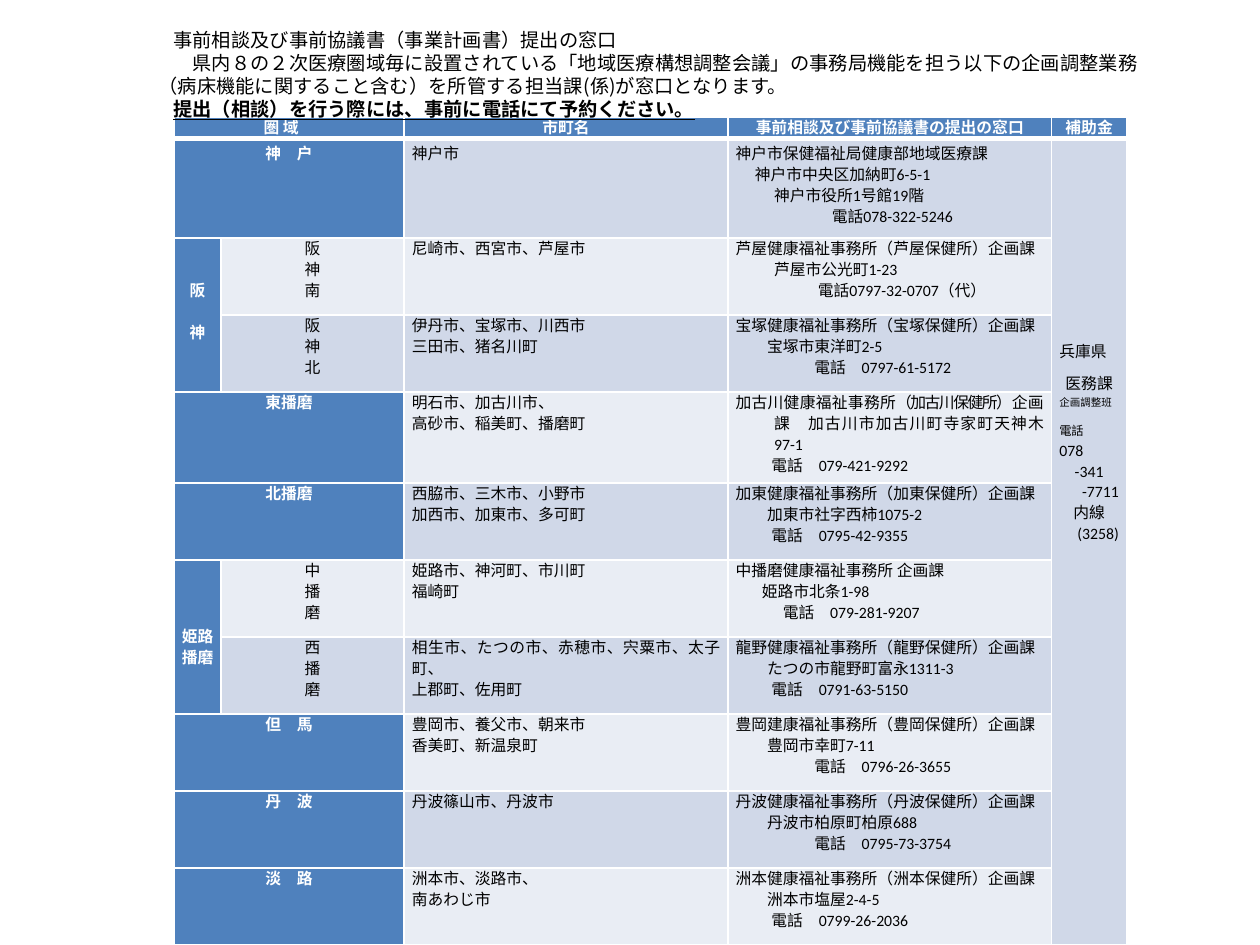
from pptx import Presentation
from pptx.dml.color import RGBColor
from pptx.enum.text import MSO_ANCHOR, PP_ALIGN
from pptx.oxml.ns import qn
from pptx.util import Pt
from lxml.etree import SubElement

HEX = {"head": "4F81BD", "dark": "D0D8E8", "pale": "E9EDF4",
       "white": "FFFFFF", "black": "000000"}
LATIN, ASIAN = "Calibri", "Noto Sans CJK JP"
LEFT, MID, RIGHT, FULL = (PP_ALIGN.LEFT, PP_ALIGN.CENTER,
                          PP_ALIGN.RIGHT, PP_ALIGN.JUSTIFY)

TITLE = [
    (44, "事前相談及び事前協議書（事業計画書）提出の窓口"),
    (55, "県内８の２次医療圏域毎に設置されている「地域医療構想調整会議」の事務局機能を担う以下の企画調整業務"),
    (35.5, "（病床機能に関すること含む）を所管する担当課(係)が窓口となります。"),
    (44, "提出（相談）を行う際には、事前に電話にて予約ください。"),
]
COLS = [27, 104.5, 185, 185, 43]
HEADS = {0: "圏 域　", 2: "市町名", 3: "事前相談及び事前協議書の提出の窓口", 4: "補助金"}

# area, towns, desk lines as (indent, text)
ROWS = [
    ("神　戸", ["神戸市"],
     [(0, "神戸市保健福祉局健康部地域医療課"), (11, "神戸市中央区加納町6-5-1"),
      (22, "神戸市役所1号館19階"), (55, "電話078-322-5246")]),
    ("阪神南", ["尼崎市、西宮市、芦屋市"],
     [(0, "芦屋健康福祉事務所（芦屋保健所）企画課"), (22, "芦屋市公光町1-23"),
      (47, "電話0797-32-0707（代）")]),
    ("阪神北", ["伊丹市、宝塚市、川西市", "三田市、猪名川町"],
     [(0, "宝塚健康福祉事務所（宝塚保健所）企画課"), (18, "宝塚市東洋町2-5"),
      (45, "電話　0797-61-5172")]),
    ("東播磨", ["明石市、加古川市、", "高砂市、稲美町、播磨町"],
     [(22, "加古川健康福祉事務所（加古川保健所）企画課　加古川市加古川町寺家町天神木97-1"),
      (20.5, "電話　079-421-9292")]),
    ("北播磨", ["西脇市、三木市、小野市", "加西市、加東市、多可町"],
     [(0, "加東健康福祉事務所（加東保健所）企画課"), (18, "加東市社字西柿1075-2"),
      (20.5, "電話　0795-42-9355")]),
    ("中播磨", ["姫路市、神河町、市川町", "福崎町"],
     [(0, "中播磨健康福祉事務所 企画課"), (15, "姫路市北条1-98"),
      (27, "電話　079-281-9207")]),
    ("西播磨", ["相生市、たつの市、赤穂市、宍粟市、太子町、", "上郡町、佐用町"],
     [(0, "龍野健康福祉事務所（龍野保健所）企画課"), (18, "たつの市龍野町富永1311-3"),
      (20.5, "電話　0791-63-5150")]),
    ("但　馬", ["豊岡市、養父市、朝来市", "香美町、新温泉町"],
     [(0, "豊岡建康福祉事務所（豊岡保健所）企画課"), (18, "豊岡市幸町7-11"),
      (45, "電話　0796-26-3655")]),
    ("丹　波", ["丹波篠山市、丹波市"],
     [(0, "丹波健康福祉事務所（丹波保健所）企画課"), (18, "丹波市柏原町柏原688"),
      (45, "電話　0795-73-3754")]),
    ("淡　路", ["洲本市、淡路市、", "南あわじ市"],
     [(0, "洲本健康福祉事務所（洲本保健所）企画課"), (18, "洲本市塩屋2-4-5"),
      (20.5, "電話　0799-26-2036")]),
]
# first row of each group, with its name lines and the space above the text
GROUPS = {2: (["阪", "神"], 24), 6: (["姫路播磨"], 12)}
SPLIT = {row + step for row in GROUPS for step in (0, 1)}
# text, alignment, size, line height, space before
GRANT = [
    ("兵庫県", LEFT, 9, 18, 0), ("医務課", MID, 9, 18, 0),
    ("企画調整班", LEFT, 6, 9, 0), ("電話", LEFT, 7, 12, 5),
    ("078", LEFT, 9, 12, 0), ("-341", MID, 9, 12, 0),
    ("-7711", RIGHT, 9, 12, 0), ("内線", MID, 9, 12, 0),
    ("(3258)", RIGHT, 9, 12, 0),
]


def color(name):
    return RGBColor.from_string(HEX[name])


def style(para, size=9, line=12, align=LEFT, tone="black", bold=False, latin=LATIN):
    para.alignment = align
    para.line_spacing = Pt(line)
    for run in para.runs:
        font = run.font
        font.name, font.size, font.bold = latin, Pt(size), bold
        font.color.rgb = color(tone)
        SubElement(run._r.get_or_add_rPr(), qn("a:ea"), typeface=ASIAN)


def indent(para, left, first=0):
    props = para._p.get_or_add_pPr()
    props.set("marL", str(Pt(left)))
    props.set("indent", str(Pt(first)))


def border(cell, base):
    props = cell._tc.get_or_add_tcPr()
    for side in "LRTB":
        line = SubElement(props, qn("a:ln" + side),
                          w=str(Pt(base if side == "B" else 1)))
        fill = SubElement(line, qn("a:solidFill"))
        SubElement(fill, qn("a:srgbClr"), val=HEX["white"])


def paint(cell, tone, base=1):
    border(cell, base)
    cell.fill.solid()
    cell.fill.fore_color.rgb = color(tone)
    cell.margin_left = cell.margin_right = Pt(4.5)
    cell.margin_top = cell.margin_bottom = 0


def write(cell, lines, **look):
    cell.text_frame.text = "\n".join(lines)
    for para in cell.text_frame.paragraphs:
        style(para, **look)
    return cell.text_frame.paragraphs


def add_desk(cell, lines, line):
    paras = write(cell, [text for _, text in lines], align=FULL)
    paras[0].line_spacing = Pt(line)
    for para, (left, _) in zip(paras, lines):
        indent(para, left)
    if lines[0][0]:
        hang(paras[0], lines[0][0])


def hang(para, left):
    """Hang the first line and tighten its bracketed part."""
    start, rest = para.text.split("（")
    inner, end = rest.split("）")
    para.text = ""
    for part in (start, f"（{inner}）", end):
        para.add_run().text = part
    style(para, align=FULL)
    indent(para, left, -left)
    para.runs[1]._r.get_or_add_rPr().set("spc", "-100")


def add_grant(cell):
    cell.margin_top = Pt(110)
    paras = write(cell, [item[0] for item in GRANT])
    for para, (_, align, size, line, gap) in zip(paras, GRANT):
        para.alignment, para.line_spacing = align, Pt(line)
        para.space_before = Pt(gap)
        para.runs[0].font.size = Pt(size)


def add_group(table, row, lines, top):
    cell = table.cell(row, 0)
    cell.merge(table.cell(row + 1, 0))
    paras = write(cell, lines, align=MID, tone="white", bold=True)
    cell.margin_top = Pt(top)
    if len(lines) == 1:
        cell.vertical_anchor = MSO_ANCHOR.MIDDLE
    for para in paras[1:]:
        para.space_before = Pt(12)


def add_title(slide):
    box = slide.shapes.add_textbox(Pt(48), Pt(11), Pt(614), Pt(82))
    frame = box.text_frame
    frame.word_wrap = True
    frame.margin_top, frame.margin_right = Pt(5), 0
    frame.text = "\n".join(text for _, text in TITLE)
    for para, (left, _) in zip(frame.paragraphs, TITLE):
        style(para, size=11, line=13.15, latin=ASIAN)
        indent(para, left)
    last = frame.paragraphs[-1].runs[0].font
    last.bold = last.underline = True


def add_desks(slide):
    highs = [12, 57, 44, 44, 52] + [44] * 6
    table = slide.shapes.add_table(len(highs), len(COLS), Pt(99.4), Pt(67),
                                   Pt(sum(COLS)), Pt(sum(highs))).table
    for col, wide in zip(table.columns, COLS):
        col.width = Pt(wide)
    for row, high in zip(table.rows, highs):
        row.height = Pt(high)
    for row in range(len(highs)):
        band = "dark" if row % 2 or row in (3, 5, 7, 9) else "pale"
        if row:
            band = "dark" if row in (1, 3, 5, 7, 9) else "pale"
        for col in range(len(COLS)):
            area = col == 0 or (col == 1 and row not in SPLIT)
            tone = "head" if row == 0 or area else "dark" if col == 4 else band
            paint(table.cell(row, col), tone, 1 if row else 3)
    for col, text in HEADS.items():
        write(table.cell(0, col), [text], align=MID, tone="white", bold=True)
    table.cell(0, 0).merge(table.cell(0, 1))
    for row, (area, towns, desk) in enumerate(ROWS, 1):
        line = 15 if row == 1 else 12
        if row in SPLIT:
            write(table.cell(row, 1), area, align=MID)
        else:
            table.cell(row, 0).merge(table.cell(row, 1))
            write(table.cell(row, 0), [area], line=line, align=MID,
                  tone="white", bold=True)
        write(table.cell(row, 2), towns, line=line, align=FULL)
        add_desk(table.cell(row, 3), desk, line)
    for row, (lines, top) in GROUPS.items():
        add_group(table, row, lines, top)
    table.cell(1, 4).merge(table.cell(len(ROWS), 4))
    add_grant(table.cell(1, 4))


def main():
    deck = Presentation()
    deck.slide_width, deck.slide_height = Pt(720), Pt(540)
    slide = deck.slides.add_slide(deck.slide_layouts[6])
    add_desks(slide)
    add_title(slide)
    deck.save("out.pptx")


if __name__ == "__main__":
    main()
